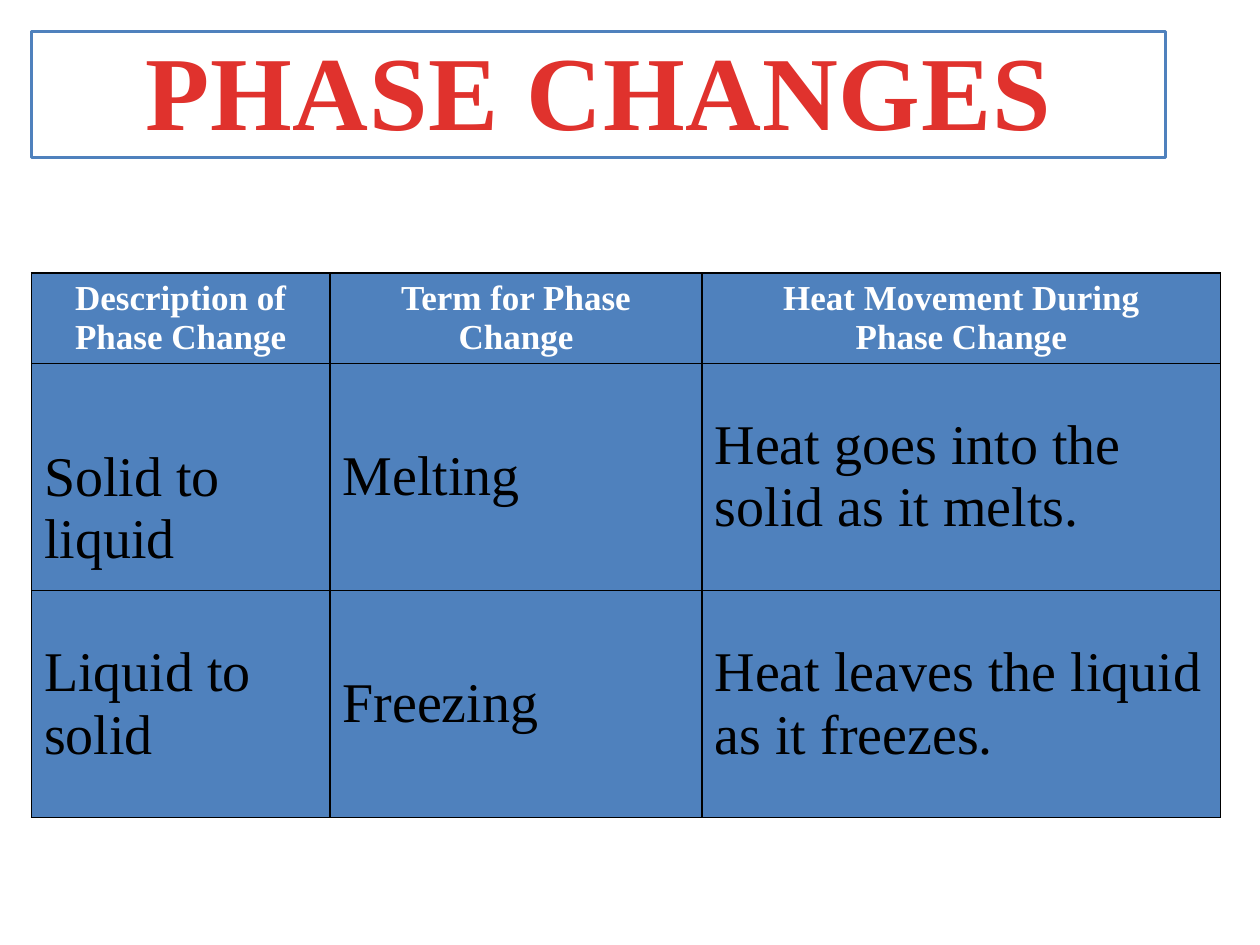
import pptx
import pptx.util
import pptx.oxml
import pptx.oxml.ns
from pptx.dml.color import RGBColor
from pptx.enum.text import MSO_ANCHOR, MSO_AUTO_SIZE, PP_ALIGN

Pt = pptx.util.Pt
BLUE = RGBColor(0x4F, 0x81, 0xBD)
RED = RGBColor(0xE0, 0x32, 0x2D)
DARK_RED = RGBColor(0xA2, 0x20, 0x1C)
WHITE = RGBColor(0xFF, 0xFF, 0xFF)
BLACK = RGBColor(0, 0, 0)
FONT = "Times New Roman"
HEADS = [
    ["Description of Phase Change"],
    ["Term for Phase Change"],
    ["Heat Movement During", "Phase Change"],
]
ROWS = [
    [["Solid to liquid"], ["Melting"], ["Heat goes into the solid as it melts."]],
    [["Liquid to solid"], ["Freezing"], ["Heat leaves the liquid as it freezes."]],
]


def add_run(para, text, size, bold):
    """Add one run in the slide's font and return its font."""
    run = para.add_run()
    run.text = text
    font = run.font
    font.name, font.size, font.bold = FONT, Pt(size), bold
    return font


def put_title(slide, left, top, width, height):
    """Place the framed title with its red gradient text."""
    title = slide.shapes.title
    title.left, title.top = Pt(left), Pt(top)
    title.width, title.height = Pt(width), Pt(height)
    title.fill.solid()
    title.fill.fore_color.rgb = WHITE
    title.line.color.rgb = BLUE
    title.line.width = Pt(2)
    frame = title.text_frame
    frame.auto_size = MSO_AUTO_SIZE.NONE
    frame.vertical_anchor = MSO_ANCHOR.BOTTOM
    para = frame.paragraphs[0]
    para.alignment = PP_ALIGN.CENTER
    font = add_run(para, "PHASE CHANGES", 60, True)
    font.fill.gradient()
    font.fill.gradient_angle = 270
    for stop, spot, color in zip(font.fill.gradient_stops, (0.25, 1), (RED, DARK_RED)):
        stop.position = spot
        stop.color.rgb = color
    para.runs[0].font._element.set("spc", "50")


def rule_cell(cell):
    """Draw thin black borders on all sides of a cell."""
    props = cell._tc.get_or_add_tcPr()
    for spot, side in enumerate(("lnL", "lnR", "lnT", "lnB")):
        line = pptx.oxml.parse_xml(
            f'<a:{side} {pptx.oxml.ns.nsdecls("a")} w="{Pt(1)}"><a:solidFill>'
            f'<a:srgbClr val="{BLACK}"/></a:solidFill></a:{side}>'
        )
        props.insert(spot, line)


def fill_cell(cell, lines, size, bold, color, align):
    """Write the lines of a cell and set its look."""
    cell.fill.solid()
    cell.fill.fore_color.rgb = BLUE
    cell.vertical_anchor = MSO_ANCHOR.MIDDLE
    rule_cell(cell)
    frame = cell.text_frame
    for spot, text in enumerate(lines):
        para = frame.add_paragraph() if spot else frame.paragraphs[0]
        para.alignment = align
        add_run(para, text, size, bold).color.rgb = color


def put_table(slide, left, top, width, height):
    """Place the table of phase changes."""
    head = 51.4
    deep = (height - head) / len(ROWS)
    shape = slide.shapes.add_table(
        1 + len(ROWS), len(HEADS), Pt(left), Pt(top), Pt(width), Pt(height)
    )
    table = shape.table
    for col, share in zip(table.columns, (0.251, 0.313, 0.436)):
        col.width = Pt(width * share)
    for row, tall in zip(table.rows, [head] + [deep] * len(ROWS)):
        row.height = Pt(tall)
    for col, lines in enumerate(HEADS):
        fill_cell(table.cell(0, col), lines, 20, True, WHITE, PP_ALIGN.CENTER)
    for row, cells in enumerate(ROWS, 1):
        for col, lines in enumerate(cells):
            fill_cell(table.cell(row, col), lines, 32, False, BLACK, PP_ALIGN.LEFT)
    table.cell(1, 0).margin_top = Pt(39.5)


def main():
    """Build and save the slide."""
    deck = pptx.Presentation()
    deck.slide_width, deck.slide_height = Pt(720), Pt(540)
    slide = deck.slides.add_slide(deck.slide_layouts[5])
    put_title(slide, 18, 18, 648, 72)
    put_table(slide, 18, 156, 679.5, 311)
    deck.save("out.pptx")


if __name__ == "__main__":
    main()
